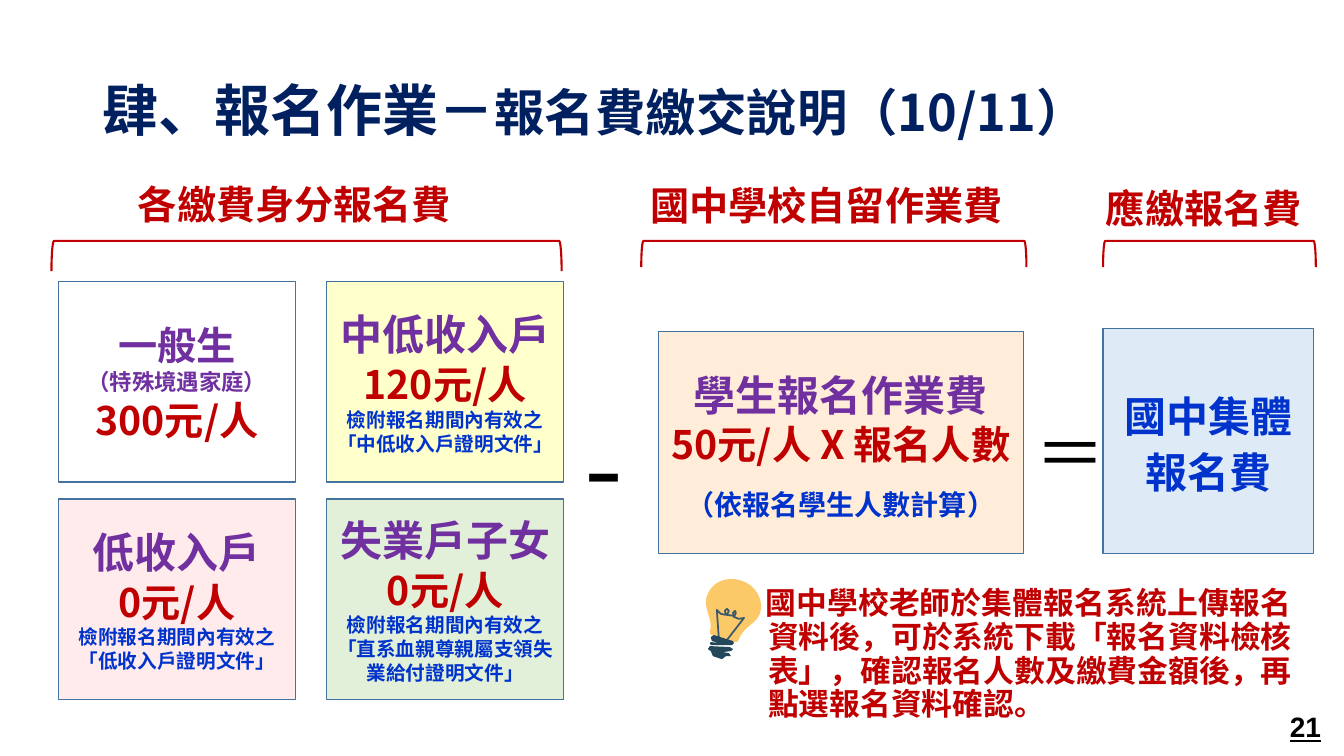
from lxml import etree
from pptx import Presentation
from pptx.dml.color import RGBColor
from pptx.enum.shapes import MSO_SHAPE
from pptx.enum.text import MSO_ANCHOR, PP_ALIGN
from pptx.oxml.ns import qn
from pptx.util import Inches, Pt

RECT, BRACKET = MSO_SHAPE.RECTANGLE, MSO_SHAPE.LEFT_BRACKET
LEFT, CENTER, RIGHT = PP_ALIGN.LEFT, PP_ALIGN.CENTER, PP_ALIGN.RIGHT
JUSTIFY = PP_ALIGN.JUSTIFY
TOP, MIDDLE = MSO_ANCHOR.TOP, MSO_ANCHOR.MIDDLE


class Theme:
    font, number_font = "Noto Sans CJK SC", "Arial"
    navy, red, purple, blue, black = "002060", "C00000", "7030A0", "0033CC", "000000"
    border, bulb, filament, base = "43739E", "FCC969", "3B596C", "25475C"
    title, subtitle, name, fee, tip, note, small = 40, 36, 30, 28, 22, 16, 14
    leading = 1.22


T = Theme

# Content: paragraphs are (text, size, colour, line pitch, space before)
TITLE = [("肆、報名作業－", T.title), ("報名費繳交說明（10/11）", T.subtitle)]


def line(text, size, colour, pitch=None, before=0):
    return text, size, colour, pitch or round(size * T.leading, 1), before


def proof_card(name, fee, proof):
    return [line(name, T.name, T.purple), line(fee, T.fee, T.red),
            line(proof, T.small, T.blue)]


FEE_CARDS = [  # row by row: fill, paragraphs
    ("FFFFFF", [line("一般生", T.fee, T.purple),
                line("（特殊境遇家庭）", T.note, T.purple),
                line("300元/人", T.fee, T.red)]),
    ("FFFFCC", proof_card("中低收入戶", "120元/人",
                          "檢附報名期間內有效之「中低收入戶證明文件」")),
    ("FFEBEB", proof_card("低收入戶", "0元/人",
                          "檢附報名期間內有效之「低收入戶證明文件」")),
    ("E2F0D9", proof_card("失業戶子女", "0元/人",
                          "檢附報名期間內有效之「直系血親尊親屬支領失業給付證明文件」")),
]
TOTAL_CARDS = [  # box, fill, paragraphs
    ((6.53, 3.29, 3.62, 2.2), "FFECD9",
     [line("學生報名作業費", T.name, T.purple, 40),
      line("50元/人 X 報名人數", T.fee, T.red, 34),
      line("（依報名學生人數計算）", 20, T.blue, 34, 5)]),
    ((10.94, 3.26, 2.09, 2.23), "DEEBF7",
     [line("國中集體報名費", T.name, T.blue, 40)]),
]
HEADINGS = [  # text, text box, bracket box
    ("各繳費身分報名費", (1.27, 1.74, 3.34, 0.57), (0.51, 2.39, 5.06, 0.3)),
    ("國中學校自留作業費", (6.35, 1.75, 3.74, 0.57), (6.36, 2.39, 3.82, 0.26)),
    ("應繳報名費", (10.87, 1.78, 2.21, 0.57), (10.94, 2.39, 2.11, 0.26)),
]
OPERATORS = [("-", 80, (5.7, 3.89, 0.73, 1.45)), ("＝", 50, (10.17, 4.01, 0.9, 0.94))]
TIP = ("國中學校老師於集體報名系統上傳報名資料後，可於系統下載「報名資料檢核表」，"
       "確認報名人數及繳費金額後，再點選報名資料確認。")

# Light bulb: outline as start and cubic curves, the rest as corner points
BULB_START = (7.35, 5.76)
BULB_CURVES = [
    ((7.2, 5.71), (7.05, 5.78), (7.01, 5.92)), ((6.99, 5.98), (7.01, 6.04), (7.03, 6.11)),
    ((7.08, 6.24), (7.01, 6.28), (7.06, 6.3)), ((7.17, 6.33), (7.17, 6.33), (7.29, 6.37)),
    ((7.34, 6.38), (7.31, 6.31), (7.42, 6.22)), ((7.47, 6.18), (7.52, 6.14), (7.54, 6.08)),
    ((7.58, 5.95), (7.49, 5.8), (7.35, 5.76)),
]
FILAMENT = [(7.13, 6.33), (7.11, 6.05), (7.15, 6.09), (7.2, 6.1), (7.19, 6.06),
            (7.21, 6.04), (7.23, 6.06), (7.21, 6.1), (7.28, 6.11), (7.27, 6.08),
            (7.29, 6.06), (7.3, 6.08), (7.28, 6.12), (7.33, 6.14), (7.38, 6.13),
            (7.21, 6.35)]
BASE_PARTS = [
    [(7.08, 6.3), (7.27, 6.36), (7.28, 6.38), (7.26, 6.4), (7.05, 6.4), (7.04, 6.38),
     (7.05, 6.37), (7.13, 6.38), (7.06, 6.36), (7.05, 6.32)],
    [(7.04, 6.41), (7.24, 6.42), (7.27, 6.44), (7.25, 6.46), (7.17, 6.47), (7.23, 6.48),
     (7.25, 6.51), (7.2, 6.51), (7.16, 6.54), (7.07, 6.51), (7.05, 6.46), (7.02, 6.44)],
]


def rgb(colour):
    return RGBColor.from_string(colour)


def set_font(p, colour, size=None, bold=True, name=T.font):
    f = p.font
    f.bold, f.name = bold, name
    f.color.rgb = rgb(colour)
    if size:
        f.size = Pt(size)
    etree.SubElement(p._p.pPr.find(qn("a:defRPr")), qn("a:ea"), typeface=name)


def write(tf, lines, align, anchor=MIDDLE):
    tf.vertical_anchor = anchor
    for i, (text, size, colour, pitch, before) in enumerate(lines):
        p = tf.add_paragraph() if i else tf.paragraphs[0]
        p.alignment, p.line_spacing = align, Pt(pitch)
        if before:
            p.space_before = Pt(before)
        p.add_run().text = text
        set_font(p, colour, size)


def add_text(box, text, size, colour, bold=True, align=LEFT, wrap=False, name=T.font):
    tf = s.shapes.add_textbox(*map(Inches, box)).text_frame
    tf.word_wrap = wrap
    p = tf.paragraphs[0]
    p.alignment = align
    p.add_run().text = text
    set_font(p, colour, size, bold, name)
    return tf


def add_card(box, fill, lines):
    sp = s.shapes.add_shape(RECT, *map(Inches, box))
    sp.shadow.inherit = False
    sp.fill.solid()
    sp.fill.fore_color.rgb = rgb(fill)
    sp.line.color.rgb, sp.line.width = rgb(T.border), Pt(1)
    write(sp.text_frame, lines, CENTER)


def add_outline(points, fill=None, stroke=None):
    pts = [(Inches(x), Inches(y)) for x, y in points]
    builder = s.shapes.build_freeform(*pts[0])
    builder.add_line_segments(pts[1:], close=fill is not None)
    sp = builder.convert_to_shape()
    sp.shadow.inherit = False
    if fill:
        sp.fill.solid()
        sp.fill.fore_color.rgb = rgb(fill)
        sp.line.fill.background()
    else:
        sp.fill.background()
        sp.line.color.rgb, sp.line.width = rgb(stroke), Pt(1.25)


def flatten(start, curves, steps=8):
    points = [start]
    for a, b, end in curves:
        begin = points[-1]
        for t in (i / steps for i in range(1, steps + 1)):
            u = 1 - t
            points.append(tuple(
                u**3 * p0 + 3 * u * u * t * p1 + 3 * u * t * t * p2 + t**3 * p3
                for p0, p1, p2, p3 in zip(begin, a, b, end)))
    return points


prs = Presentation()
prs.slide_width, prs.slide_height = Inches(13.33), Inches(7.5)
s = prs.slides.add_slide(prs.slide_layouts[5])

# Title
title = s.shapes.title
title.left, title.top, title.width, title.height = map(Inches, (0.92, 0.4, 11.5, 1.45))
title.text_frame.vertical_anchor = MIDDLE
p = title.text_frame.paragraphs[0]
p.alignment, p.line_spacing = LEFT, 0.9
for text, size in TITLE:
    r = p.add_run()
    r.text, r.font.size = text, Pt(size)
set_font(p, T.navy)

# Fee cards in a two by two grid, then the two totals
for i, (fill, lines) in enumerate(FEE_CARDS):
    row, col = divmod(i, 2)
    add_card((0.58 + 2.66 * col, 2.79 + 2.16 * row, 2.35, 1.99), fill, lines)
for card in TOTAL_CARDS:
    add_card(*card)

# Headings with brackets turned to open downwards
for text, box, (x, y, w, h) in HEADINGS:
    add_text(box, text, T.fee, T.red)
    turned = (x + (w - h) / 2, y + (h - w) / 2, h, w)
    sp = s.shapes.add_shape(BRACKET, *map(Inches, turned))
    sp.rotation = 90
    sp.shadow.inherit = False
    sp.fill.background()
    sp.line.color.rgb, sp.line.width = rgb(T.red), Pt(1.5)

# Operators
for text, size, box in OPERATORS:
    add_text(box, text, size, T.black, bold=False)

# Tip with light bulb
tf = s.shapes.add_textbox(*map(Inches, (7.27, 5.78, 5.64, 1.33))).text_frame
tf.word_wrap = True
tf.paragraphs[0]._p.get_or_add_pPr().set("marL", str(Inches(0.25)))
tf.paragraphs[0]._p.pPr.set("indent", str(Inches(-0.03)))
write(tf, [line(TIP, T.tip, T.red, 24)], JUSTIFY, TOP)
add_outline(flatten(BULB_START, BULB_CURVES), fill=T.bulb)
add_outline(FILAMENT, stroke=T.filament)
for part in BASE_PARTS:
    add_outline(part, fill=T.base)

# Page number
tf = add_text((10.2, 7.01, 3, 0.4), "21", 20, T.black, align=RIGHT, wrap=True,
              name=T.number_font)
tf.vertical_anchor = MIDDLE
tf.paragraphs[0].font.underline = True

prs.save("out.pptx")
